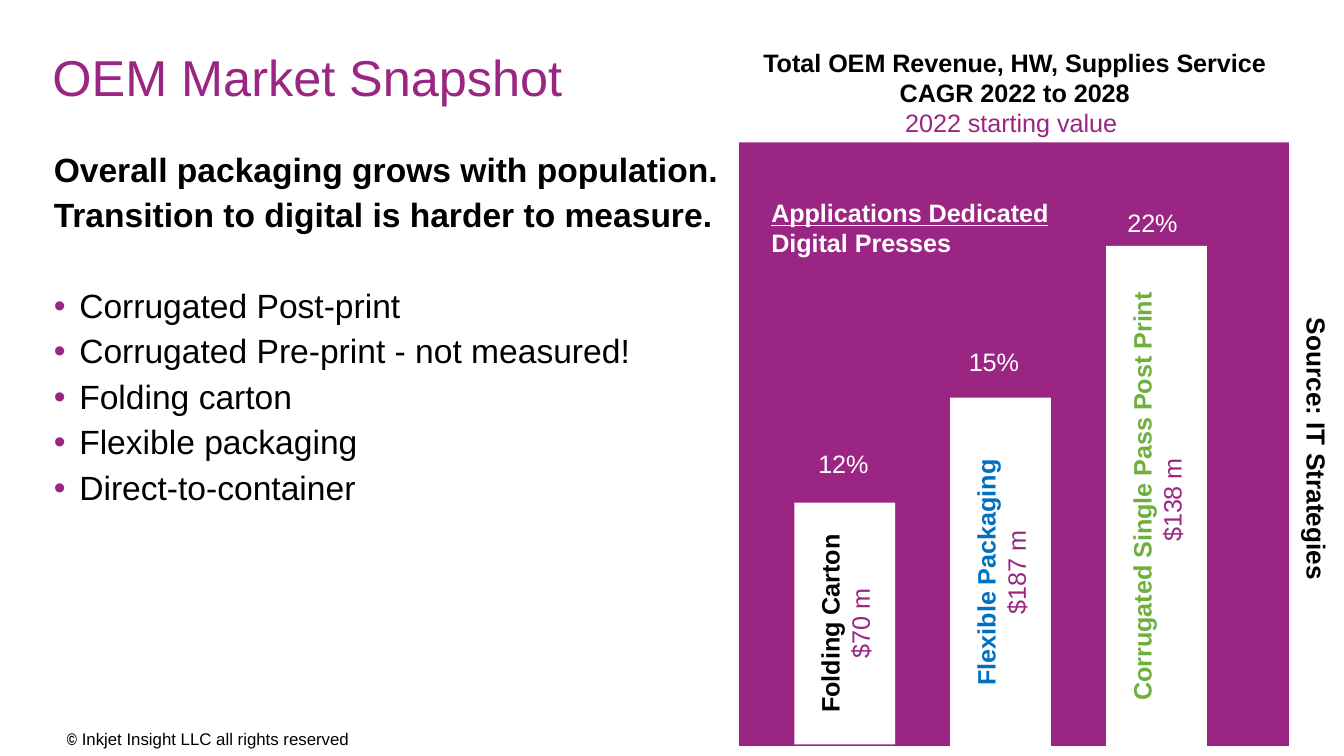
from lxml.etree import SubElement
from pptx import Presentation
from pptx.dml.color import RGBColor
from pptx.enum.shapes import MSO_SHAPE
from pptx.enum.text import MSO_ANCHOR, MSO_AUTO_SIZE, PP_ALIGN
from pptx.oxml.ns import qn
from pptx.util import Pt

PX = 9144  # EMU, 100 px to the inch
PURPLE = RGBColor(0x9B, 0x25, 0x83)
BLUE = RGBColor(0x00, 0x70, 0xC0)
GREEN = RGBColor(0x6E, 0xAF, 0x3D)
BLACK = RGBColor(0, 0, 0)
WHITE = RGBColor(0xFF, 0xFF, 0xFF)

BULLET_INDENT = 19
CLAIMS = ["Overall packaging grows with population.",
          "Transition to digital is harder to measure."]
SEGMENTS = ["Corrugated Post-print", "Corrugated Pre-print - not measured!",
            "Folding carton", "Flexible packaging", "Direct-to-container"]
# name, name colour, starting value, growth,
# bar (left, top, height), growth label (left, top), all within the panel
BARS = [
    ("Folding Carton", BLACK, "$70 m", "12%", (41, 268, 180), (42, 223)),
    ("Flexible Packaging", BLUE, "$187 m", "15%", (157, 190, 260), (154, 147)),
    ("Corrugated Single Pass Post Print", GREEN, "$138 m ", "22%",
     (273, 77, 373), (272, 43)),
]


def px(*lengths):
    return [length * PX for length in lengths]


def set_font(font, size, color, bold=False, name="Arial"):
    font.name = name
    font.size = Pt(size)
    font.bold = bold
    font.color.rgb = color


def add_para(frame, text, size, color, bold=False, align=PP_ALIGN.LEFT):
    """Fill the frame's first paragraph if still empty, else append one."""
    para = frame.paragraphs[0]
    if para.runs:
        para = frame.add_paragraph()
    para.alignment = align
    para.add_run().text = text
    set_font(para.font, size, color, bold)
    return para


def add_text_box(page, box, margins=True):
    shape = page.shapes.add_textbox(*px(*box))
    frame = shape.text_frame
    frame.word_wrap = True
    if not margins:
        frame.margin_left = frame.margin_right = 0
        frame.margin_top = frame.margin_bottom = 0
    return shape


def add_rectangle(page, box, color):
    shape = page.shapes.add_shape(MSO_SHAPE.RECTANGLE, *px(*box))
    shape.shadow.inherit = False
    shape.fill.solid()
    shape.fill.fore_color.rgb = color
    shape.line.fill.background()
    return shape


def add_bullet(para):
    props = para._p.get_or_add_pPr()
    props.set("marL", str(BULLET_INDENT * PX))
    props.set("indent", str(-BULLET_INDENT * PX))
    bullet_color = SubElement(props, qn("a:buClr"))
    SubElement(bullet_color, qn("a:srgbClr")).set("val", str(PURPLE))
    SubElement(props, qn("a:buFont")).set("typeface", "Arial")
    SubElement(props, qn("a:buChar")).set("char", "•")


def place_title(page, box):
    title = page.shapes.title
    title.left, title.top, title.width, title.height = px(*box)
    frame = title.text_frame
    frame.auto_size = MSO_AUTO_SIZE.NONE
    frame.vertical_anchor = MSO_ANCHOR.TOP
    frame.margin_left = frame.margin_right = 0
    frame.margin_top = frame.margin_bottom = 5 * PX
    para = add_para(frame, "OEM Market Snapshot", 27, PURPLE)
    para.line_spacing = 0.9


def add_market_points(page, box):
    frame = add_text_box(page, box, margins=False).text_frame
    for index, text in enumerate(CLAIMS + SEGMENTS):
        is_claim = index < len(CLAIMS)
        para = add_para(frame, text, 18, BLACK, bold=is_claim)
        para.line_spacing = 0.95
        if index == len(CLAIMS):
            para.space_before = Pt(28)
        elif index:
            para.space_before = Pt(3.8)
        if not is_claim:
            add_bullet(para)


def add_bar(page, box, name, color, value):
    frame = add_rectangle(page, box, WHITE).text_frame
    frame.word_wrap = True
    frame.vertical_anchor = MSO_ANCHOR.MIDDLE
    frame._txBody.bodyPr.set("vert", "vert270")
    add_para(frame, name, 13.5, color, True, PP_ALIGN.CENTER)
    add_para(frame, value, 13.5, PURPLE, False, PP_ALIGN.CENTER)


def add_growth_panel(page, box):
    left, top, width, _ = box
    add_rectangle(page, box, PURPLE)
    for name, color, value, growth, bar, label in BARS:
        bar_left, bar_top, bar_height = bar
        add_bar(page, (left + bar_left, top + bar_top, 75, bar_height),
                name, color, value)
        label_box = (left + label[0], top + label[1], 71, 33)
        add_para(add_text_box(page, label_box).text_frame,
                 growth, 13.5, WHITE, False, PP_ALIGN.CENTER)

    legend = add_text_box(page, (left + 14, top + 36, 238, 56)).text_frame
    para = add_para(legend, "Applications Dedicated", 13.5, WHITE, True)
    para.runs[0].font.underline = True
    para.add_run().text = " Digital Presses"

    heading = add_text_box(page, (left + 1, top - 76, width - 1, 78)).text_frame
    for text, color, bold in (
            ("Total OEM Revenue, HW, Supplies Service", BLACK, True),
            ("CAGR 2022 to 2028", BLACK, True),
            ("2022 starting value ", PURPLE, False)):
        add_para(heading, text, 13.5, color, bold, PP_ALIGN.CENTER)


def add_source(page, box):
    shape = add_text_box(page, box)
    shape.rotation = 90
    add_para(shape.text_frame, "Source: IT Strategies", 14, BLACK, True,
             PP_ALIGN.CENTER)


def add_copyright(page, box):
    para = add_text_box(page, box).text_frame.paragraphs[0]
    for text, name, bold in (
            ("©", "Arial Narrow", True),
            (" Inkjet Insight LLC all rights reserved", "Arial", False)):
        span = para.add_run()
        span.text = text
        set_font(span.font, 9, BLACK, bold, name)


def main():
    deck = Presentation()
    deck.slide_width = 1000 * PX
    deck.slide_height = deck.slide_width * 9 // 16
    page = deck.slides.add_slide(deck.slide_layouts.get_by_name("Title Only"))
    add_copyright(page, (40, 537, 307, 25))
    add_market_points(page, (40, 113, 501, 337))
    place_title(page, (39, 34, 457, 56))
    add_growth_panel(page, (550, 106, 409, 449))
    add_source(page, (758, 317, 443, 34))
    deck.save("out.pptx")


if __name__ == "__main__":
    main()
